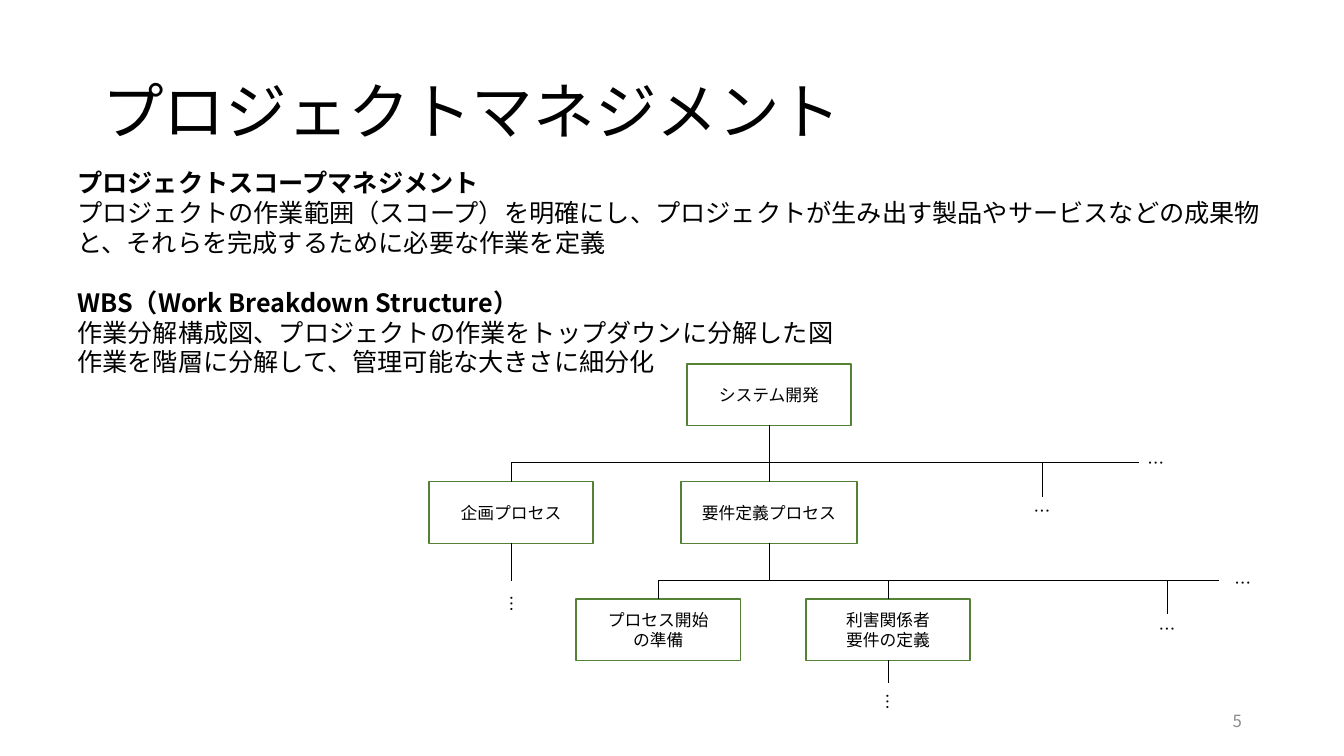
from dataclasses import dataclass

from lxml.etree import SubElement
from pptx import Presentation
from pptx.dml.color import RGBColor
from pptx.enum.shapes import MSO_CONNECTOR as Connector, MSO_SHAPE as Shape
from pptx.enum.text import MSO_ANCHOR as Anchor, PP_ALIGN as Align
from pptx.oxml.ns import qn
from pptx.util import Cm, Pt


@dataclass(frozen=True)
class Theme:
    ink: str = "000000"
    muted: str = "8C8C8C"
    box_fill: str = "FFFFFF"
    box_line: str = "548235"
    font: str = "Noto Sans CJK JP"
    heading_font: str = "Arial"
    title: int = 44
    body: int = 18
    label: int = 12
    leading: float = 1.19
    box_width: float = 4.14
    box_height: float = 1.55


THEME = Theme()

# Tree geometry in cm: column centres, level tops, branch heights
PLANNING, PREPARE, ROOT, STAKEHOLDER = 12.88, 16.59, 19.38, 22.38
PROCESS_MORE, TASK_MORE = 26.26, 29.41
ROOT_TOP, PROCESS_TOP, TASK_TOP = 9.17, 12.14, 15.09
PROCESS_BRANCH, TASK_BRANCH = 11.65, 14.63


def write(frame, text, size=THEME.label, color=THEME.ink, bold=False,
          font=THEME.font, align=Align.LEFT, before=0, tight=1):
    """Add text to a frame, one paragraph per line."""
    for line in text.split("\n"):
        first = frame.paragraphs[0]
        paragraph = frame.add_paragraph() if first.runs else first
        paragraph.alignment = align
        paragraph.line_spacing = Pt(round(size * THEME.leading * tight, 1))
        paragraph.space_before = Pt(before)
        run = paragraph.add_run()
        run.text = line
        run.font.size = Pt(size)
        run.font.bold = bold
        run.font.name = font
        run.font.color.rgb = RGBColor.from_string(color)
        SubElement(run.font._element, qn("a:ea"), typeface=THEME.font)


def add_text_box(slide, left, top, width, height, anchor=Anchor.TOP):
    shape = slide.shapes.add_textbox(Cm(left), Cm(top), Cm(width), Cm(height))
    shape.text_frame.word_wrap = True
    shape.text_frame.vertical_anchor = anchor
    return shape


def add_box(slide, center, top, text, width=THEME.box_width):
    shape = slide.shapes.add_shape(
        Shape.RECTANGLE, Cm(center - width / 2), Cm(top), Cm(width), Cm(THEME.box_height))
    shape.shadow.inherit = False
    shape.fill.solid()
    shape.fill.fore_color.rgb = RGBColor.from_string(THEME.box_fill)
    shape.line.color.rgb = RGBColor.from_string(THEME.box_line)
    shape.line.width = Pt(1)
    frame = shape.text_frame
    frame.word_wrap = True
    frame.vertical_anchor = Anchor.MIDDLE
    write(frame, text, align=Align.CENTER)


def add_ellipsis(slide, center, middle, rotation=0):
    width, height = 2.6, 0.78
    shape = add_text_box(slide, center - width / 2, middle - height / 2, width, height)
    shape.rotation = rotation
    write(shape.text_frame, "…", align=Align.CENTER)


def add_line(slide, x1, y1, x2, y2, kind=Connector.STRAIGHT):
    connector = slide.shapes.add_connector(kind, Cm(x1), Cm(y1), Cm(x2), Cm(y2))
    connector.line.color.rgb = RGBColor.from_string(THEME.ink)
    connector.line.width = Pt(0.5)
    SubElement(connector._element.spPr, qn("a:effectLst"))
    return connector


def add_branch(slide, x1, y1, x2, y2, branch):
    """Join two points by vertical legs and a level run at the branch height."""
    center, middle = (x1 + x2) / 2, (y1 + y2) / 2
    half_width, half_height = (y2 - y1) / 2, (x2 - x1) / 2
    connector = add_line(slide, center - half_width, middle - half_height,
                         center + half_width, middle + half_height, Connector.ELBOW)
    # A quarter turn plus a flip makes the outer legs vertical
    properties = connector._element.spPr
    transform = properties.find(qn("a:xfrm"))
    transform.set("rot", str(270 * 60000))
    transform.set("flipH", "1")
    geometry = properties.find(qn("a:prstGeom"))
    adjustments = geometry.find(qn("a:avLst"))
    if adjustments is None:
        adjustments = SubElement(geometry, qn("a:avLst"))
    share = round((branch - y1) / (y2 - y1) * 100000)
    SubElement(adjustments, qn("a:gd"), name="adj1", fmla=f"val {share}")


def add_copy(slide):
    title = add_text_box(slide, 2.33, 1.02, 29.21, 3.68, Anchor.MIDDLE)
    write(title.text_frame, "プロジェクトマネジメント", size=THEME.title, tight=0.9)

    number = add_text_box(slide, 23.93, 17.65, 7.62, 1.02, Anchor.MIDDLE)
    write(number.text_frame, "5", color=THEME.muted, align=Align.RIGHT)

    frame = add_text_box(slide, 1.7, 4.09, 30.45, 6.4).text_frame
    size = THEME.body
    write(frame, "プロジェクトスコープマネジメント", size=size, bold=True,
          font=THEME.heading_font)
    write(frame, "プロジェクトの作業範囲（スコープ）を明確にし、プロジェクトが生み出す製品や"
          "サービスなどの成果物と、それらを完成するために必要な作業を定義", size=size)
    write(frame, "WBS（Work Breakdown Structure）", size=size, bold=True,
          before=size * THEME.leading)
    write(frame, "作業分解構成図、プロジェクトの作業をトップダウンに分解した図\n"
          "作業を階層に分解して、管理可能な大きさに細分化", size=size)


def add_tree(slide):
    # Boxes
    add_box(slide, ROOT, ROOT_TOP, "システム開発")
    add_box(slide, PREPARE, TASK_TOP, "プロセス開始\nの準備")
    add_box(slide, STAKEHOLDER, TASK_TOP, "利害関係者\n要件の定義")
    add_box(slide, ROOT, PROCESS_TOP, "要件定義プロセス", width=4.43)
    add_box(slide, PLANNING, PROCESS_TOP, "企画プロセス")

    # Further items
    for center, middle, rotation in (
            (STAKEHOLDER, 17.69, 90), (31.32, 14.69, 0), (PLANNING, 15.23, 90),
            (29.13, 11.67, 0), (TASK_MORE, 15.86, 0), (PROCESS_MORE, 12.89, 0)):
        add_ellipsis(slide, center, middle, rotation)

    # Branches between levels
    process_bottom = PROCESS_TOP + THEME.box_height
    drop = 0.39
    add_branch(slide, PLANNING, PROCESS_TOP, PROCESS_MORE, PROCESS_TOP + drop, PROCESS_BRANCH)
    add_branch(slide, PREPARE, TASK_TOP, TASK_MORE, TASK_TOP + drop, TASK_BRANCH)
    add_branch(slide, ROOT, process_bottom, STAKEHOLDER, TASK_TOP, TASK_BRANCH)

    # Straight stems and branch ends
    add_line(slide, ROOT, ROOT_TOP + THEME.box_height, ROOT, PROCESS_TOP)
    add_line(slide, PLANNING, process_bottom, PLANNING, TASK_BRANCH)
    add_line(slide, STAKEHOLDER, TASK_TOP + THEME.box_height, STAKEHOLDER, 17.22)
    add_line(slide, PROCESS_MORE, PROCESS_BRANCH, 28.7, PROCESS_BRANCH)
    add_line(slide, TASK_MORE, TASK_BRANCH, 30.71, TASK_BRANCH)


def main():
    presentation = Presentation()
    presentation.slide_width = Cm(33.87)
    presentation.slide_height = Cm(19.05)
    slide = presentation.slides.add_slide(presentation.slide_layouts[6])
    add_copy(slide)
    add_tree(slide)
    presentation.save("out.pptx")


if __name__ == "__main__":
    main()
